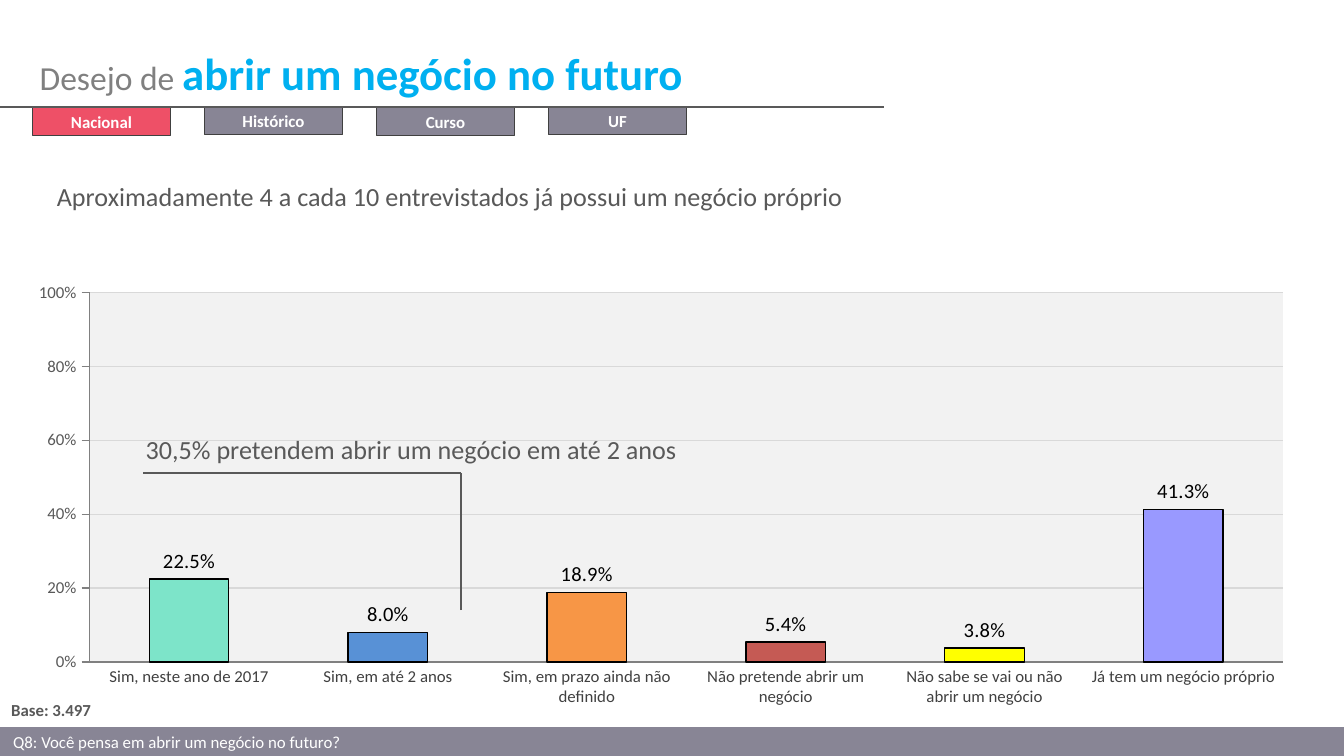
from dataclasses import dataclass

from lxml import etree
from pptx import Presentation
from pptx.chart import data as chart_data
from pptx.dml import color
from pptx.enum import chart as chart_enum, shapes, text
from pptx.oxml import ns
from pptx.util import Pt

PX = 4572


@dataclass(frozen=True)
class Theme:
    """Colours, font and type sizes of the slide."""
    font: str = "Calibri"
    white: str = "FFFFFF"
    black: str = "000000"
    bar: str = "888595"
    active: str = "EE5067"
    accent: str = "00B0F0"
    muted: str = "808080"
    body: str = "595959"
    dark: str = "404040"
    grid: str = "D9D9D9"
    plot: str = "F2F2F2"
    columns: tuple = ("7DE4C9", "5891D6", "F79646", "C55A54", "FFFF00", "9999FF")
    small: int = 9
    label: int = 11
    note: int = 14
    lead: int = 18
    title: int = 24


THEME = Theme()
DATA = {
    "Sim, neste ano de 2017": 0.225,
    "Sim, em até 2 anos": 0.08,
    "Sim, em prazo ainda não definido": 0.189,
    "Não pretende abrir um negócio": 0.054,
    "Não sabe se vai ou não abrir um negócio": 0.038,
    "Já tem um negócio próprio": 0.413,
}


def emu(*lengths):
    """Turn px lengths into EMU."""
    return [length * PX for length in lengths]


def rgb(value):
    """Return a colour from its hex value."""
    return color.RGBColor.from_string(value)


def assign(target, **values):
    """Set each named attribute on the target."""
    for name, value in values.items():
        setattr(target, name, value)


def style_font(font, size, hue, bold=False):
    """Format a font with the theme typeface."""
    assign(font, name=THEME.font, size=Pt(size), bold=bold)
    font.color.rgb = rgb(hue)


def style_line(line, hue, width=0.75):
    """Give a line its colour and width."""
    line.color.rgb = rgb(hue)
    line.width = Pt(width)


def style_fill(fill, hue):
    """Give a fill one solid colour."""
    fill.solid()
    fill.fore_color.rgb = rgb(hue)


def add_run(paragraph, wording, size, hue, bold=False):
    """Add a formatted run to a paragraph."""
    run = paragraph.add_run()
    run.text = wording
    style_font(run.font, size, hue, bold)


def add_note(slide, box, wording, size, bold=False):
    """Add a single-line text box."""
    frame = slide.shapes.add_textbox(*emu(*box)).text_frame
    assign(frame, word_wrap=False, auto_size=text.MSO_AUTO_SIZE.SHAPE_TO_FIT_TEXT)
    add_run(frame.paragraphs[0], wording, size, THEME.body, bold)


def add_bar(slide, box, wording, fill, alignment, bold=False, outline=None):
    """Add a filled rectangle with one line of text."""
    shape = slide.shapes.add_shape(shapes.MSO_SHAPE.RECTANGLE, *emu(*box))
    shape.shadow.inherit = False
    style_fill(shape.fill, fill)
    if outline:
        style_line(shape.line, outline, 0.25)
    else:
        shape.line.fill.background()
    shape.text_frame.vertical_anchor = text.MSO_ANCHOR.MIDDLE
    paragraph = shape.text_frame.paragraphs[0]
    paragraph.alignment = alignment
    add_run(paragraph, wording, THEME.small, THEME.white, bold)


def add_rule(slide, *ends):
    """Add a straight line between two points."""
    connector = slide.shapes.add_connector(shapes.MSO_CONNECTOR.STRAIGHT, *emu(*ends))
    style_line(connector.line, THEME.body)
    properties = connector._element.spPr
    etree.SubElement(properties, ns.qn("a:effectLst"))


def add_title(slide, box):
    """Fill and place the title placeholder."""
    title = slide.shapes.title
    assign(title, **dict(zip(("left", "top", "width", "height"), emu(*box))))
    assign(title.text_frame, vertical_anchor=text.MSO_ANCHOR.TOP, word_wrap=True,
           auto_size=text.MSO_AUTO_SIZE.SHAPE_TO_FIT_TEXT)
    paragraph = title.text_frame.paragraphs[0]
    paragraph.alignment = text.PP_ALIGN.LEFT
    add_run(paragraph, "Desejo de ", THEME.lead, THEME.muted)
    add_run(paragraph, "abrir um negócio no futuro", THEME.title, THEME.accent, True)


def add_tabs(slide, box):
    """Add the row of tabs under its rule, with the first one active."""
    left, top, width, height = box
    names = ("Histórico", "Curso", "UF", "Nacional")
    for index, name in zip((1, 2, 3, 0), names):
        fill = THEME.bar if index else THEME.active
        place = (left + 256 * index, top - index % 2, width, height)
        add_bar(slide, place, name, fill, text.PP_ALIGN.CENTER, True, THEME.dark)
    add_rule(slide, 0, top - 1, 1315, top - 1)


def style_plot(chart):
    """Fill the plot area and fix its inner layout."""
    area = chart._chartSpace.chart.plotArea
    for old in area.findall(ns.qn("c:layout")):
        area.remove(old)
    layout = etree.Element(ns.qn("c:layout"))
    manual = etree.SubElement(layout, ns.qn("c:manualLayout"))
    settings = {"layoutTarget": "inner", "xMode": "edge", "yMode": "edge",
                "x": 0.05, "y": 0.02, "w": 0.94, "h": 0.88}
    for name, value in settings.items():
        etree.SubElement(manual, ns.qn(f"c:{name}")).set("val", str(value))
    area.insert(0, layout)
    properties = etree.SubElement(area, ns.qn("c:spPr"))
    fill = etree.SubElement(properties, ns.qn("a:solidFill"))
    etree.SubElement(fill, ns.qn("a:srgbClr")).set("val", THEME.plot)


def style_axes(chart):
    """Format both axes and the gridlines."""
    tick = chart_enum.XL_TICK_MARK
    axes = ((chart.category_axis, tick.NONE, THEME.dark),
            (chart.value_axis, tick.OUTSIDE, THEME.body))
    for axis, mark, hue in axes:
        assign(axis, major_tick_mark=mark, minor_tick_mark=tick.NONE)
        style_font(axis.tick_labels.font, THEME.small, hue)
        style_line(axis.format.line, THEME.muted)
    assign(chart.value_axis, minimum_scale=0, maximum_scale=1, major_unit=0.2,
           has_major_gridlines=True)
    assign(chart.value_axis.tick_labels, number_format="0%", number_format_is_linked=False)
    style_line(chart.value_axis.major_gridlines.format.line, THEME.grid)


def add_column_chart(slide, box):
    """Add the column chart of answers."""
    answers = chart_data.CategoryChartData(number_format="0.0%")
    answers.categories = list(DATA)
    answers.add_series("Series 1", list(DATA.values()))
    kind = chart_enum.XL_CHART_TYPE.COLUMN_CLUSTERED
    chart = slide.shapes.add_chart(kind, *emu(*box), answers).chart
    assign(chart, has_legend=False, has_title=False)
    style_font(chart.font, THEME.lead, THEME.black)
    plot = chart.plots[0]
    assign(plot, gap_width=150, vary_by_categories=False, has_data_labels=True)
    assign(plot.data_labels, show_value=True, number_format="0.0%",
           number_format_is_linked=False,
           position=chart_enum.XL_LABEL_POSITION.OUTSIDE_END)
    style_font(plot.data_labels.font, THEME.label, THEME.black)
    for index, hue in enumerate(THEME.columns):
        point = plot.series[0].points[index]
        style_fill(point.format.fill, hue)
        style_line(point.format.line, THEME.black)
    style_axes(chart)
    style_plot(chart)


def add_callout(slide, box):
    """Add the bracket and its note over the first two columns."""
    left, top, width, height = box
    right = left + width
    add_rule(slide, left, top, right, top)
    add_rule(slide, right, top + height, right, top)
    add_note(slide, (left - 16, top - 69, 838, 67),
             "30,5% pretendem abrir um negócio em até 2 anos", THEME.note)


def main():
    """Build and save the slide."""
    presentation = Presentation()
    assign(presentation, slide_width=2000 * PX, slide_height=1125 * PX)
    slide = presentation.slides.add_slide(presentation.slide_layouts[5])
    style_fill(slide.background.fill, THEME.white)
    add_bar(slide, (0, 1082, 2000, 43), "Q8: Você pensa em abrir um negócio no futuro?",
            THEME.bar, text.PP_ALIGN.LEFT)
    add_title(slide, (39, 58, 1732, 101))
    add_column_chart(slide, (39, 421, 1889, 630))
    add_callout(slide, (213, 704, 473, 204))
    add_note(slide, (65, 258, 1220, 67),
             "Aproximadamente 4 a cada 10 entrevistados já possui um negócio próprio", THEME.note)
    add_tabs(slide, (48, 160, 206, 41))
    add_note(slide, (-3, 1032, 160, 50), "Base: 3.497", THEME.small, True)
    presentation.save("out.pptx")


if __name__ == "__main__":
    main()
